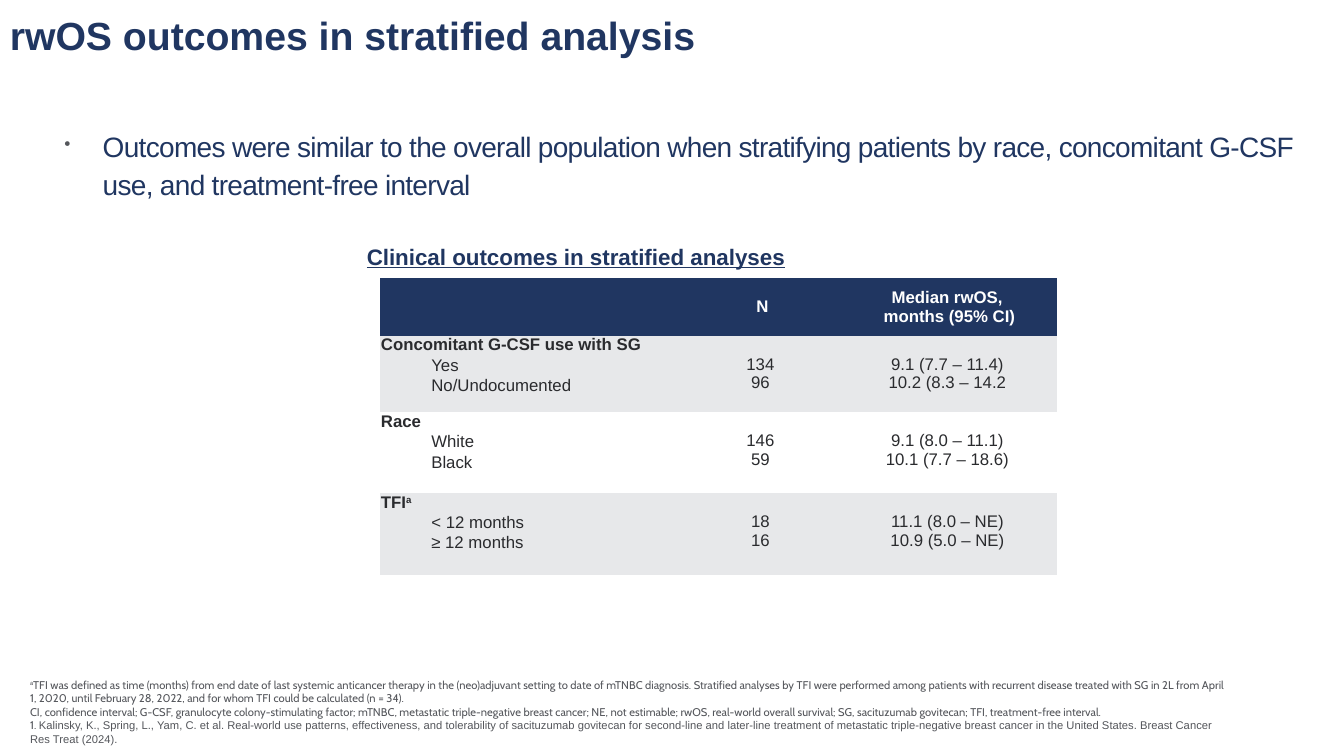
from lxml import etree
from pptx import Presentation
from pptx.dml.color import RGBColor
from pptx.enum.text import MSO_ANCHOR, PP_ALIGN
from pptx.oxml.ns import qn
from pptx.util import Pt

CENTER = PP_ALIGN.CENTER
MIDDLE, TOP = MSO_ANCHOR.MIDDLE, MSO_ANCHOR.TOP
NAVY, GREY, INK, BAND, WHITE = "203661", "54565B", "2A2B2E", "E7E8EA", "FFFFFF"
PLAIN_TABLE = "{2D5ABB26-0587-4C30-8999-92F81FD0307C}"
LINE = 13.8  # height of one 12 pt line


def rgb(value):
    return RGBColor.from_string(value)


class SlideBuilder:
    def __init__(self, slide, font):
        self.slide = slide
        self.font = font

    def run(self, paragraph, text, size, color, bold=False, underline=False,
            font=None, raised=0, spacing=0):
        """Add text in one style; each newline becomes a line break."""
        for i, line in enumerate(text.split("\n")):
            if i:
                paragraph.add_line_break()
            run = paragraph.add_run()
            run.text = line
            run.font.name = font or self.font
            run.font.size = Pt(size)
            run.font.bold = bold
            run.font.underline = underline
            run.font.color.rgb = rgb(color)
            properties = run._r.get_or_add_rPr()
            if raised:
                properties.set("baseline", str(raised * 1000))
            if spacing:
                properties.set("spc", str(round(spacing * 100)))

    def paragraph(self, frame, first, indent=0, hanging=0, align=None,
                  before=0, after=0, line_spacing=None):
        paragraph = frame.paragraphs[0] if first else frame.add_paragraph()
        paragraph.alignment = align
        paragraph.space_before = Pt(0 if first else before)
        paragraph.space_after = Pt(after)
        paragraph.line_spacing = line_spacing
        properties = paragraph._p.get_or_add_pPr()
        properties.set("marL", str(Pt(indent)))
        properties.set("indent", str(Pt(-hanging)))
        return paragraph

    def text_box(self, left, top, width, height):
        box = self.slide.shapes.add_textbox(Pt(left), Pt(top), Pt(width), Pt(height))
        box.text_frame.word_wrap = True
        return box.text_frame

    def bullet(self, paragraph, color, percent):
        properties = paragraph._p.get_or_add_pPr()
        bullet_color = etree.SubElement(properties, qn("a:buClr"))
        etree.SubElement(bullet_color, qn("a:srgbClr"), val=color)
        etree.SubElement(properties, qn("a:buSzPct"), val=str(percent * 1000))
        etree.SubElement(properties, qn("a:buChar"), char="•")

    def table(self, left, top, widths, heights):
        frame = self.slide.shapes.add_table(
            len(heights), len(widths), Pt(left), Pt(top), Pt(sum(widths)), Pt(sum(heights)))
        for style_id in frame.element.iter(qn("a:tableStyleId")):
            style_id.text = PLAIN_TABLE
        table = frame.table
        table.first_row = table.horz_banding = False
        for column, width in zip(table.columns, widths):
            column.width = Pt(width)
        for row, height in zip(table.rows, heights):
            row.height = Pt(height)
        return table

    def cell(self, cell, fill, anchor=TOP, top_margin=0):
        cell.fill.solid()
        cell.fill.fore_color.rgb = rgb(fill)
        cell.margin_left = cell.margin_right = cell.margin_bottom = 0
        cell.margin_top = Pt(top_margin)
        cell.vertical_anchor = anchor
        return cell.text_frame


def add_outcomes_table(builder):
    headers = ["", "N", "Median rwOS, \nmonths (95% CI)"]
    strata = [
        ("Concomitant G-CSF use with SG", "", ["Yes", "No/Undocumented"],
         ["134", "96"], ["9.1 (7.7 – 11.4)", "10.2 (8.3 – 14.2"]),
        ("Race", "", ["White", "Black"],
         ["146", "59"], ["9.1 (8.0 – 11.1)", "10.1 (7.7 – 18.6)"]),
        ("TFI", "a", ["< 12 months", "≥ 12 months"],
         ["18", "16"], ["11.1 (8.0 – NE)", "10.9 (5.0 – NE)"]),
    ]
    table = builder.table(271.4, 198.7, [216.7, 110.2, 157], [41, 54.7, 57.6, 59])

    for column, header in enumerate(headers):
        frame = builder.cell(table.cell(0, column), NAVY, MIDDLE)
        if header:
            heading = builder.paragraph(frame, True, indent=2.9, align=CENTER)
            builder.run(heading, header, 12, WHITE, bold=True)

    for row, (stratum, mark, groups, *measures) in enumerate(strata, start=1):
        fill = BAND if row % 2 else WHITE
        frame = builder.cell(table.cell(row, 0), fill)
        heading = builder.paragraph(frame, True, indent=0.7)
        builder.run(heading, stratum, 12, INK, bold=True)
        if mark:
            builder.run(heading, mark, 12, INK, bold=True, raised=30)
        for group in groups:
            builder.run(builder.paragraph(frame, False, indent=36.7, before=1.1),
                        group, 12, INK)
        for column, values in enumerate(measures, start=1):
            frame = builder.cell(table.cell(row, column), fill, top_margin=LINE)
            for i, value in enumerate(values):
                builder.run(builder.paragraph(frame, i == 0, align=CENTER), value, 12, INK)


def add_footnotes(builder):
    frame = builder.text_box(11.5, 481, 874, 55.4)
    definition = builder.paragraph(frame, True, indent=2.9)
    builder.run(definition, "a", 8, GREY, font="Cabin", raised=33)
    builder.run(
        definition,
        "TFI was defined as time (months) from end date of last systemic anticancer therapy "
        "in the (neo)adjuvant setting to date of mTNBC diagnosis. Stratified analyses by TFI "
        "were performed among patients with recurrent disease treated with SG in 2L from "
        "April 1, 2020, until February 28, 2022, and for whom TFI could be calculated (n = 34).",
        8, GREY, font="Cabin")
    references = builder.paragraph(frame, False, indent=2.9)
    builder.run(
        references,
        "CI, confidence interval; G-CSF, granulocyte colony-stimulating factor; mTNBC, "
        "metastatic triple-negative breast cancer; NE, not estimable; rwOS, real-world overall "
        "survival; SG, sacituzumab govitecan; TFI, treatment-free interval.\n1. ",
        8, GREY, font="Cabin")
    builder.run(
        references,
        "Kalinsky, K., Spring, L., Yam, C. et al. Real-world use patterns, effectiveness, and "
        "tolerability of sacituzumab govitecan for second-line and later-line treatment of "
        "metastatic triple-negative breast cancer in the United States. Breast Cancer Res "
        "Treat (2024).",
        8, GREY)


def main():
    presentation = Presentation()
    presentation.slide_width, presentation.slide_height = Pt(960), Pt(540)
    slide = presentation.slides.add_slide(presentation.slide_layouts[6])
    builder = SlideBuilder(slide, "Arial")

    title = builder.paragraph(builder.text_box(0, 8, 864, 45.4), True, line_spacing=0.9)
    builder.run(title, "rwOS outcomes in stratified analysis", 28, NAVY, bold=True)

    finding = builder.paragraph(builder.text_box(38.9, 85.7, 895.7, 348.5), True,
                                indent=27.4, hanging=27.4, after=6, line_spacing=1.14)
    builder.bullet(finding, GREY, 65)
    builder.run(finding,
                "Outcomes were similar to the overall population when stratifying patients by "
                "race, concomitant G-CSF use, and treatment-free interval",
                20, NAVY, spacing=-0.5)

    add_outcomes_table(builder)
    add_footnotes(builder)

    caption = builder.paragraph(builder.text_box(254.2, 170, 479.5, 26.6), True, indent=0.7)
    builder.run(caption, "Clinical outcomes in stratified analyses", 16, NAVY,
                bold=True, underline=True)

    presentation.save("out.pptx")


if __name__ == "__main__":
    main()
